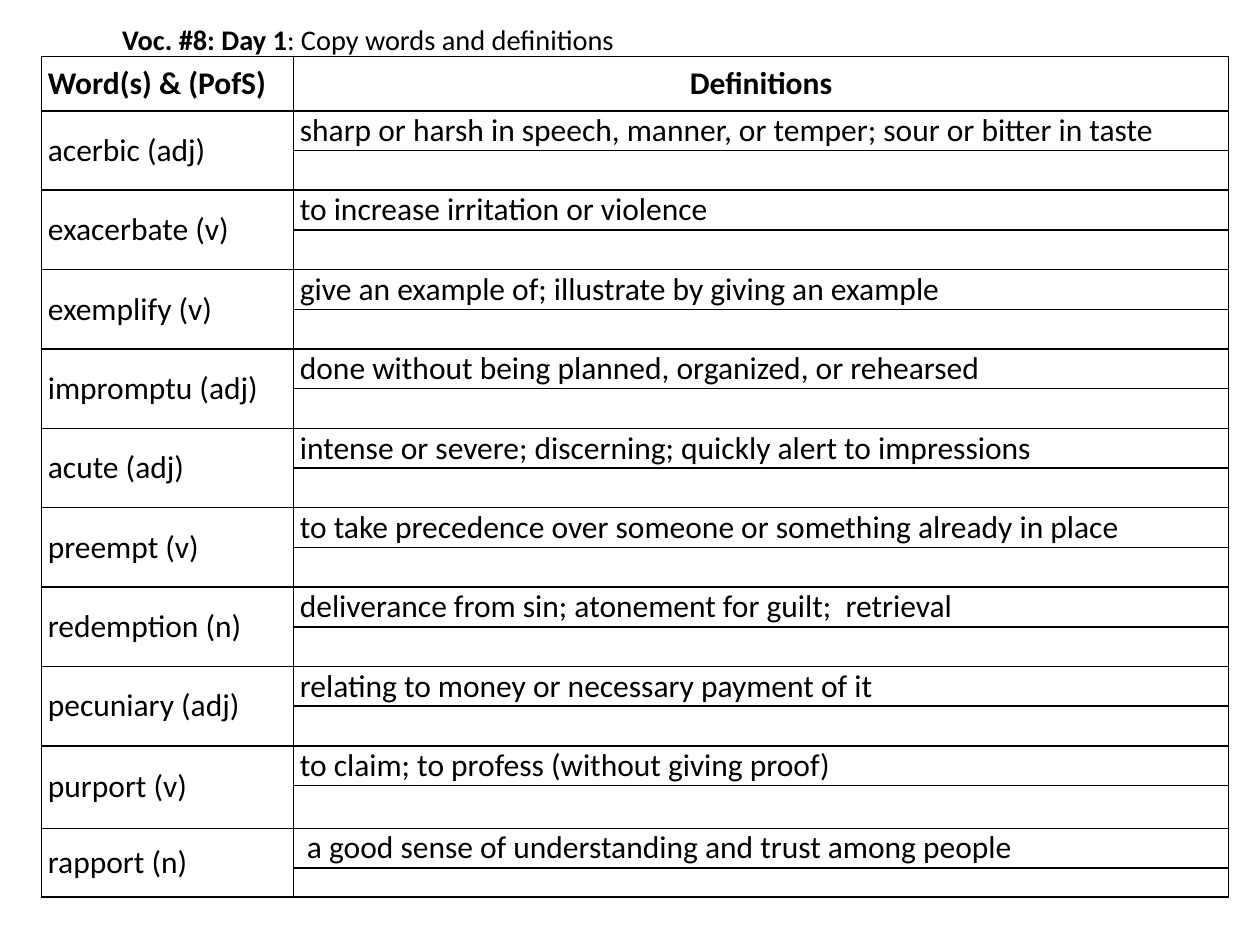
from pptx import Presentation
from pptx.dml.color import RGBColor
from pptx.enum.text import MSO_ANCHOR, PP_ALIGN
from pptx.oxml import parse_xml
from pptx.oxml.ns import nsdecls
from pptx.util import Inches, Pt

FONT = "Calibri"
BLACK = "000000"
WHITE = "FFFFFF"

HEADINGS = ["Word(s) & (PofS)", "Definitions"]
VOCABULARY = [
    ("acerbic (adj)", "sharp or harsh in speech, manner, or temper; sour or bitter in taste"),
    ("exacerbate (v)", "to increase irritation or violence"),
    ("exemplify (v)", "give an example of; illustrate by giving an example"),
    ("impromptu (adj)", "done without being planned, organized, or rehearsed"),
    ("acute (adj)", "intense or severe; discerning; quickly alert to impressions"),
    ("preempt (v)", "to take precedence over someone or something already in place"),
    ("redemption (n)", "deliverance from sin; atonement for guilt;  retrieval"),
    ("pecuniary (adj)", "relating to money or necessary payment of it"),
    ("purport (v)", "to claim; to profess (without giving proof)"),
    ("rapport (n)", " a good sense of understanding and trust among people"),
]


def color(value):
    return RGBColor.from_string(value)


def style_font(font, size, bold=None):
    font.name = FONT
    font.size = Pt(size)
    font.bold = bold
    font.color.rgb = color(BLACK)


def add_borders(cell):
    properties = cell._tc.get_or_add_tcPr()
    for index, side in enumerate(("lnL", "lnR", "lnT", "lnB")):
        properties.insert(index, parse_xml(
            f'<a:{side} {nsdecls("a")} w="{Pt(1)}"><a:solidFill>'
            f'<a:srgbClr val="{BLACK}"/></a:solidFill></a:{side}>'))


def format_cell(cell):
    cell.fill.solid()
    cell.fill.fore_color.rgb = color(WHITE)
    cell.vertical_anchor = MSO_ANCHOR.MIDDLE
    cell.margin_left = cell.margin_right = Inches(0.05)
    cell.margin_top = cell.margin_bottom = 0
    # A small size keeps the empty writing lines from growing
    style_font(cell.text_frame.paragraphs[0].font, 12)
    add_borders(cell)


def write_cell(cell, text, bold=False):
    cell.text = text
    style_font(cell.text_frame.paragraphs[0].font, 18, bold)


def add_title(slide, left, top, width, height):
    text_frame = slide.shapes.add_textbox(left, top, width, height).text_frame
    text_frame.word_wrap = True
    text_frame.vertical_anchor = MSO_ANCHOR.MIDDLE
    paragraph = text_frame.paragraphs[0]
    paragraph.alignment = PP_ALIGN.CENTER
    style_font(paragraph.font, 16.2)
    for text, bold in (("Voc. #8: Day 1", True), (": Copy words and definitions", False)):
        run = paragraph.add_run()
        run.text = text
        run.font.bold = bold


def add_vocabulary_table(slide, left, top, width, height):
    row_count = 1 + 2 * len(VOCABULARY)
    table = slide.shapes.add_table(row_count, 2, left, top, width, height).table
    table.first_row = table.horz_banding = False

    # Column widths and row heights: all rows equal but three
    word_width = Inches(2)
    table.columns[0].width = word_width
    table.columns[1].width = width - word_width
    special_heights = {0: Inches(0.43), 18: Inches(0.34), 20: Inches(0.23)}
    shared_height = height - sum(special_heights.values())
    equal_height = shared_height // (row_count - len(special_heights))
    for index, row in enumerate(table.rows):
        row.height = special_heights.get(index, equal_height)

    for cell in table.iter_cells():
        format_cell(cell)

    # Header row
    for column, heading in enumerate(HEADINGS):
        write_cell(table.cell(0, column), heading, bold=True)
    table.cell(0, 1).text_frame.paragraphs[0].alignment = PP_ALIGN.CENTER

    # Each word spans two rows: its definition and an empty line
    for index, (word, definition) in enumerate(VOCABULARY):
        row = 1 + 2 * index
        table.cell(row, 0).merge(table.cell(row + 1, 0))
        write_cell(table.cell(row, 0), word)
        write_cell(table.cell(row, 1), definition)


def main():
    presentation = Presentation()
    presentation.slide_width = Inches(10)
    presentation.slide_height = Inches(7.5)
    slide = presentation.slides.add_slide(presentation.slide_layouts[6])
    add_title(slide, Inches(0.67), Inches(0), Inches(4.5), Inches(0.62))
    add_vocabulary_table(slide, Inches(0.33), Inches(0.45), Inches(9.42), Inches(6.67))
    presentation.save("out.pptx")


if __name__ == "__main__":
    main()
